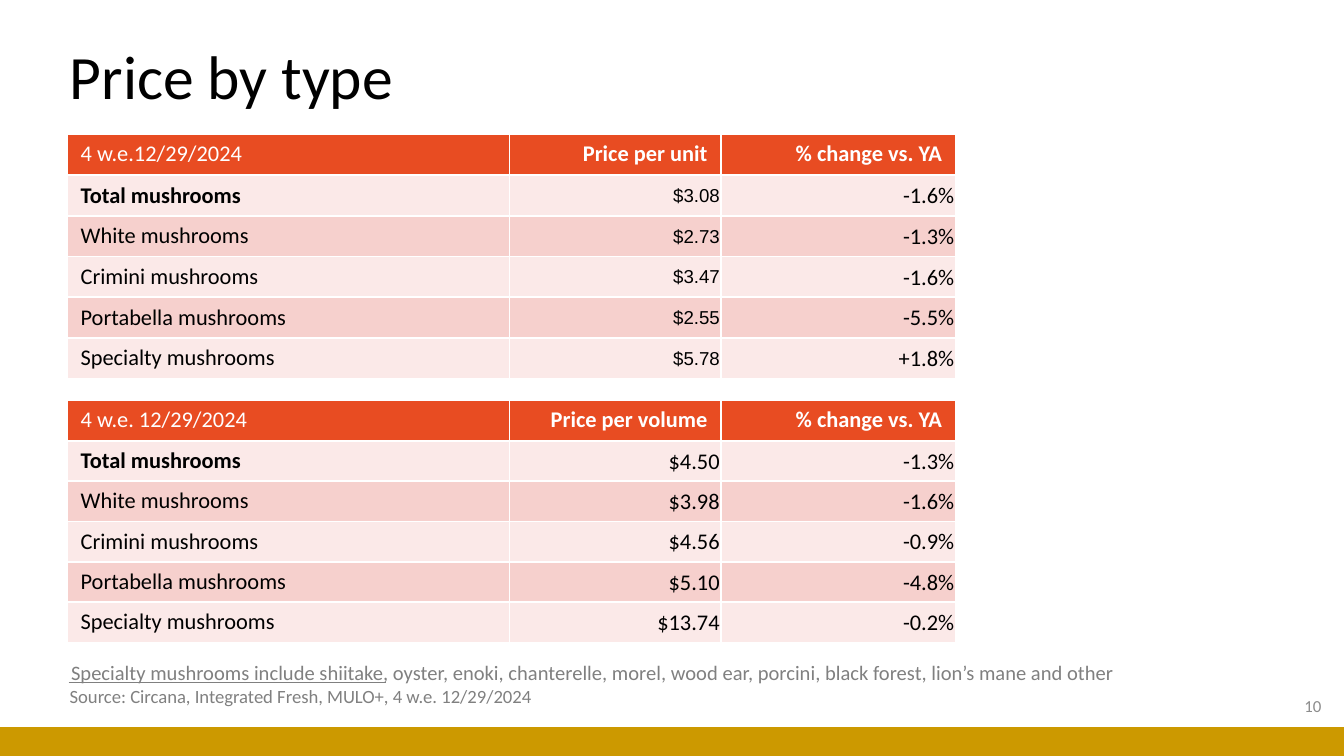
from dataclasses import dataclass

from lxml import etree
from pptx import Presentation
from pptx import util as u
from pptx.dml.color import RGBColor
from pptx.enum import shapes, text
from pptx.oxml.ns import qn


@dataclass(frozen=True)
class Theme:
    font: str = "Calibri"
    number_font: str = "Arial"
    black: str = "000000"
    white: str = "FFFFFF"
    gray: str = "808080"
    page_gray: str = "8C8C8C"
    gold: str = "CC9900"
    header: str = "E84C22"
    bands: tuple = ("FBE9E8", "F6D0CD")
    title_size: int = 33
    table_size: int = 12
    note_size: int = 11
    small_size: int = 10
    page_size: int = 9


THEME = Theme()
RIGHT = text.PP_ALIGN.RIGHT
MIDDLE = text.MSO_ANCHOR.MIDDLE

# Page grid: square cells, ten to the inch
COLUMNS, ROWS = 100, 56.25
TABLE_LEFT = 5
TABLE_COLUMNS = (32.9, 15.75, 17.45)

TYPES = ("Total", "White", "Crimini", "Portabella", "Specialty")
UNIT_PRICES = (("$3.08", "-1.6%"), ("$2.73", "-1.3%"), ("$3.47", "-1.6%"),
               ("$2.55", "-5.5%"), ("$5.78", "+1.8%"))
VOLUME_PRICES = (("$4.50", "-1.3%"), ("$3.98", "-1.6%"), ("$4.56", "-0.9%"),
                 ("$5.10", "-4.8%"), ("$13.74", "-0.2%"))


def grid(*cells):
    return [u.Inches(cell / 10) for cell in cells]


def rgb(color):
    return RGBColor.from_string(color)


def write(frame, words, size, color, font=THEME.font, bold=False, align=None):
    frame.text = words
    para = frame.paragraphs[0]
    para.alignment = align
    for span in para.runs:
        span.font.name = font
        span.font.size = u.Pt(size)
        span.font.bold = bold
        span.font.color.rgb = rgb(color)
    return para


def add_title(page, words):
    title = page.shapes.title
    title.left, title.top, title.width, title.height = grid(4.2, 0.5, 86.2, 10.9)
    frame = title.text_frame
    frame.auto_size = text.MSO_AUTO_SIZE.NONE
    frame.vertical_anchor = MIDDLE
    para = write(frame, words, THEME.title_size, THEME.black,
                 align=text.PP_ALIGN.LEFT)
    para.line_spacing = 0.9


def add_label(page, place, words, size, color=THEME.gray, align=None, anchor=None):
    box = page.shapes.add_textbox(*grid(*place))
    box.text_frame.word_wrap = True
    box.text_frame.vertical_anchor = anchor
    write(box.text_frame, words, size, color, align=align)


def add_footer_bar(page):
    height = 2.15
    bar = page.shapes.add_shape(shapes.MSO_SHAPE.RECTANGLE,
                                *grid(0, ROWS - height, COLUMNS, height))
    bar.shadow.inherit = False
    bar.fill.solid()
    bar.fill.fore_color.rgb = rgb(THEME.gold)
    bar.line.fill.background()


def add_rule(page, start, end):
    rule = page.shapes.add_connector(shapes.MSO_CONNECTOR.STRAIGHT,
                                     *grid(*start, *end))
    rule.line.color.rgb = rgb(THEME.gray)
    rule.line.width = u.Pt(0.5)
    etree.SubElement(rule._element.spPr, qn("a:effectLst"))


def paint_cell(cell, color):
    # Borders come before the fill in the cell properties
    properties = cell._tc.get_or_add_tcPr()
    for side in ("a:lnL", "a:lnR", "a:lnT", "a:lnB"):
        border = etree.SubElement(properties, qn(side), w=str(u.Pt(1)))
        fill = etree.SubElement(border, qn("a:solidFill"))
        etree.SubElement(fill, qn("a:srgbClr"), val=THEME.white)
    cell.fill.solid()
    cell.fill.fore_color.rgb = rgb(color)


def add_price_table(page, top, row_height, headings, prices, price_font, price_size):
    records = [headings] + [(f"{kind} mushrooms", *values)
                            for kind, values in zip(TYPES, prices)]
    table = page.shapes.add_table(
        len(records), len(headings),
        *grid(TABLE_LEFT, top, sum(TABLE_COLUMNS), row_height * len(records))).table
    table.first_row = table.horz_banding = False
    for column, width in zip(table.columns, grid(*TABLE_COLUMNS)):
        column.width = width

    for r, record in enumerate(records):
        table.rows[r].height = grid(row_height)[0]
        for c, words in enumerate(record):
            cell = table.cell(r, c)
            is_header, is_value = r == 0, r > 0 and c > 0
            is_price = is_value and c == 1
            paint_cell(cell, THEME.header if is_header
                       else THEME.bands[(r - 1) % 2])
            cell.margin_top = cell.margin_bottom = u.Inches(0.04)
            cell.vertical_anchor = None if is_header else MIDDLE
            if is_value:
                cell.margin_left = cell.margin_right = u.Inches(0.01)
                cell.margin_top, cell.margin_bottom = u.Inches(0.01), 0
            # Bold: the value headings and the total row's name
            write(cell.text_frame, words,
                  price_size if is_price else THEME.table_size,
                  THEME.white if is_header else THEME.black,
                  font=price_font if is_price else THEME.font,
                  bold=(is_header and c > 0) or (r == 1 and c == 0),
                  align=RIGHT if c else None)


def main():
    deck = Presentation()
    deck.slide_width, deck.slide_height = grid(COLUMNS, ROWS)
    page = deck.slides.add_slide(deck.slide_layouts[5])

    # Frame of the page
    add_footer_bar(page)
    add_title(page, "Price by type")
    add_label(page, (76.8, 51, 22.5, 3), "10", THEME.page_size,
              THEME.page_gray, RIGHT, MIDDLE)

    # Price tables
    add_price_table(page, 10, 3.03,
                    ("4 w.e.12/29/2024", "Price per unit", "% change vs. YA"),
                    UNIT_PRICES, THEME.number_font, THEME.small_size)
    add_price_table(page, 29.8, 3,
                    ("4 w.e. 12/29/2024", "Price per volume", "% change vs. YA"),
                    VOLUME_PRICES, THEME.font, THEME.table_size)

    # Notes
    add_rule(page, (5.1, 50.8), (28.7, 50.8))
    add_label(page, (4.2, 50.5, 37.2, 2.7),
              "Source: Circana, Integrated Fresh, MULO+, 4 w.e. 12/29/2024",
              THEME.small_size)
    add_label(page, (4.3, 48.6, 82.8, 2.9),
              "Specialty mushrooms include shiitake, oyster, enoki, chanterelle, "
              "morel, wood ear, porcini, black forest, lion’s mane and other",
              THEME.note_size)
    deck.save("out.pptx")


if __name__ == "__main__":
    main()
